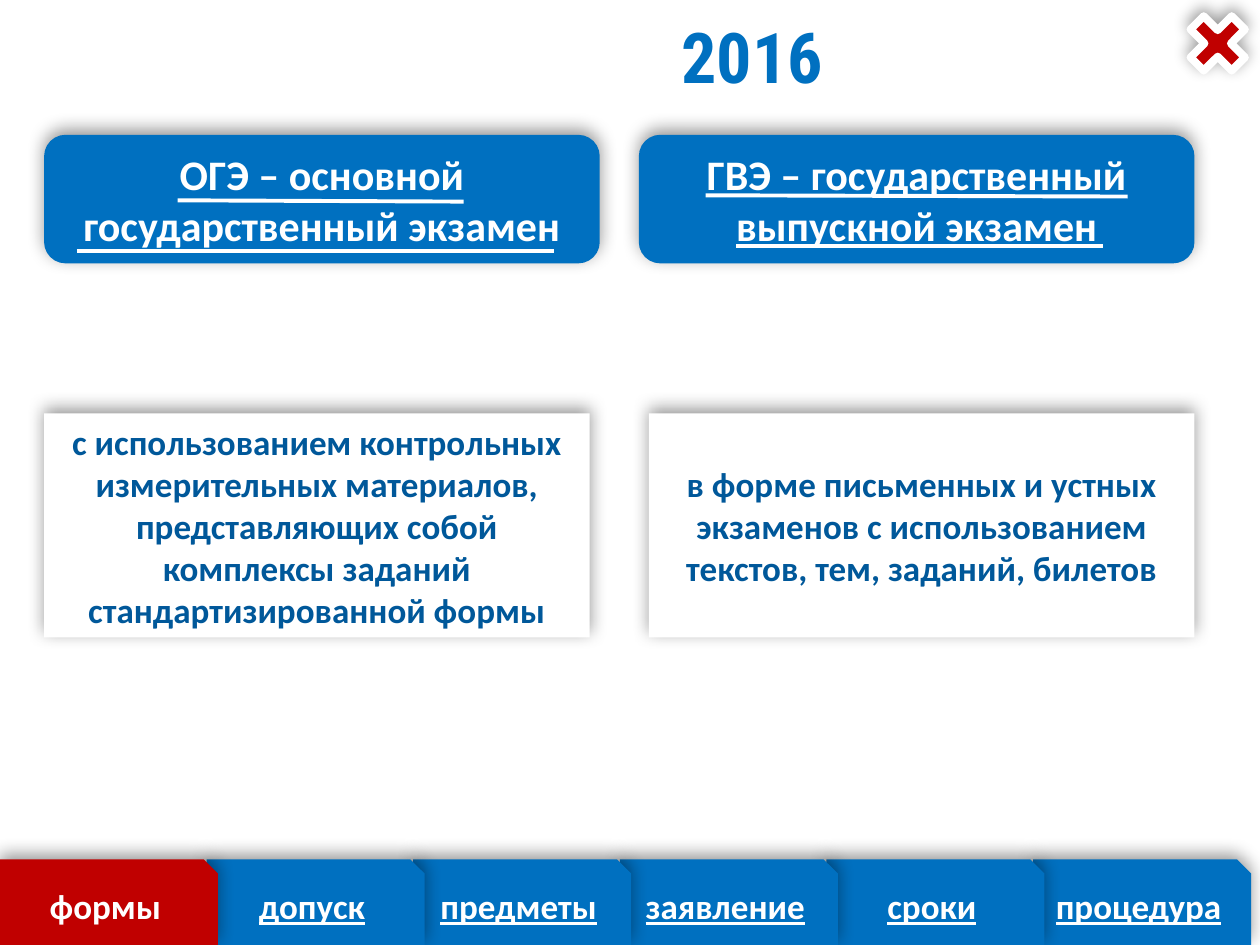
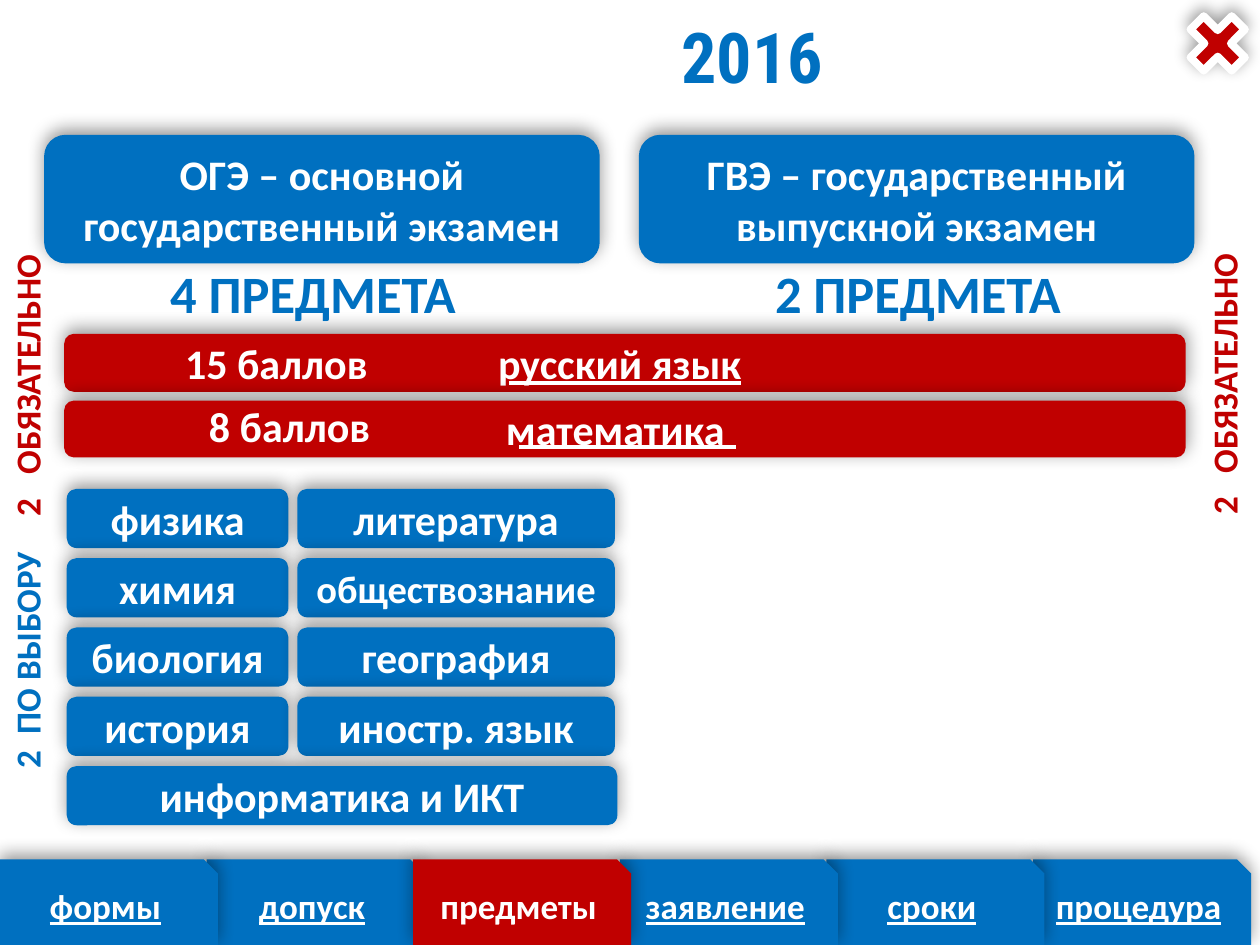
import pptx
import pptx.util
import pptx.dml.color
import pptx.enum.shapes
import pptx.enum.text
import pptx.oxml
import pptx.oxml.ns
import lxml.etree

Inches = pptx.util.Inches
Shapes = pptx.enum.shapes.MSO_SHAPE
Align = pptx.enum.text.PP_ALIGN
Anchor = pptx.enum.text.MSO_ANCHOR

# Shared look
BLUE, RED, WHITE, NAVY = "0070C0", "C00000", "FFFFFF", "00589A"
FONT, TITLE_FONT = "Calibri", "Roboto Condensed"
SECTIONS = ["формы", "допуск", "предметы", "заявление", "сроки", "процедура"]
SECTION_STEP = 1.64
EXAMS = ["ОГЭ – основной государственный экзамен",
         "ГВЭ – государственный выпускной экзамен"]


def color(value):
    return pptx.dml.color.RGBColor.from_string(value)


def place(*lengths):
    return [Inches(length) for length in lengths]


def write(box, text, size=24, ink=WHITE, font=FONT, align=Align.CENTER,
          anchor=Anchor.MIDDLE, underline=None, right_inset=0.1, tab=None):
    """Put one formatted paragraph into a box; tab is a stop in inches."""
    frame = box.text_frame
    frame.word_wrap = True
    frame.vertical_anchor = anchor
    frame.margin_right = Inches(right_inset)
    para = frame.paragraphs[0]
    para.alignment = align
    if tab:
        stops = lxml.etree.SubElement(para._p.get_or_add_pPr(),
                                      pptx.oxml.ns.qn("a:tabLst"))
        lxml.etree.SubElement(stops, pptx.oxml.ns.qn("a:tab"),
                              pos=str(Inches(tab)), algn="l")
    span = para.add_run()
    span.text = text
    span.font.name = font
    span.font.size = pptx.util.Pt(size)
    span.font.bold = True
    span.font.underline = underline
    span.font.color.rgb = color(ink)


def add_glow(shape, blur=10):
    """Soft dark shadow cast upwards."""
    shape.shadow.inherit = False
    effects = shape._element.spPr.find(pptx.oxml.ns.qn("a:effectLst"))
    effects.append(pptx.oxml.parse_xml(
        f'<a:outerShdw {pptx.oxml.ns.nsdecls("a")} blurRad="{pptx.util.Pt(blur)}" '
        f'dist="{pptx.util.Pt(3)}" dir="16200000" algn="b" rotWithShape="0">'
        '<a:srgbClr val="000000"><a:alpha val="40000"/></a:srgbClr></a:outerShdw>'))


def add_panel(page, kind, position, fill, text=None, blur=10, **text_format):
    panel = page.shapes.add_shape(kind, *place(*position))
    panel.fill.solid()
    panel.fill.fore_color.rgb = color(fill)
    panel.line.fill.background()
    add_glow(panel, blur)
    if text:
        write(panel, text, **text_format)
    return panel


def add_label(page, position, text, rotation=0, **text_format):
    label = page.shapes.add_textbox(*place(*position))
    label.rotation = rotation
    write(label, text, anchor=Anchor.TOP, **text_format)


def add_underline(page, left, right, start_y, end_y=None):
    rule = page.shapes.add_connector(
        pptx.enum.shapes.MSO_CONNECTOR.STRAIGHT,
        *place(left, start_y, right, end_y or start_y))
    rule.line.color.rgb = color(WHITE)
    rule.line.width = pptx.util.Pt(2.25)
    lxml.etree.SubElement(rule._element.spPr, pptx.oxml.ns.qn("a:effectLst"))


def add_section_tab(page, index, active):
    add_panel(page, Shapes.SNIP_1_RECTANGLE,
              (index * SECTION_STEP, 6.82, 1.73, 0.68),
              RED if active else BLUE, SECTIONS[index],
              size=20, underline=None if active else True)


def add_page(deck, active):
    """Page with year title, section tabs, close button and exam headers."""
    page = deck.slides.add_slide(deck.slide_layouts[5])
    title = page.shapes.title
    title.left, title.top, title.width, title.height = place(4.71, 0.06, 2.52, 0.77)
    write(title, "2016", size=40, ink=BLUE, font=TITLE_FONT, anchor=Anchor.TOP)

    # Tabs overlap from right to left, the active one lies on top
    others = [i for i in reversed(range(len(SECTIONS))) if i != active]
    for index in others + [active]:
        add_section_tab(page, index, index == active)

    close = add_panel(page, Shapes.MATH_MULTIPLY, (9.35, 0.03, 0.63, 0.63), RED, blur=9)
    close.line.color.rgb = color(WHITE)
    close.line.width = pptx.util.Pt(4.5)

    for left, exam in zip((0.35, 5.07), EXAMS):
        add_panel(page, Shapes.ROUNDED_RECTANGLE, (left, 1.07, 4.41, 1.02), BLUE, exam)
    return page


def build_forms(deck):
    page = add_page(deck, SECTIONS.index("формы"))
    descriptions = [
        "с использованием контрольных измерительных материалов, "
        "представляющих собой комплексы заданий стандартизированной формы",
        "в форме письменных и устных экзаменов с использованием "
        "текстов, тем, заданий, билетов"]
    for left, description in zip((0.35, 5.15), descriptions):
        add_panel(page, Shapes.RECTANGLE, (left, 3.28, 4.33, 1.78), WHITE,
                  description, size=20, ink=NAVY)

    # Underlines of the exam headers
    add_underline(page, 1.41, 3.68, 1.59, 1.6)
    add_underline(page, 0.61, 4.4, 1.99)
    add_underline(page, 5.6, 8.95, 1.55, 1.56)
    add_underline(page, 5.84, 8.75, 1.95)


def build_subjects(deck):
    page = add_page(deck, SECTIONS.index("предметы"))

    # Compulsory subjects
    for top, height, subject, inset in [(2.65, 0.46, "русский язык", 0.18),
                                        (3.18, 0.45, "математика", 0.25)]:
        add_panel(page, Shapes.ROUNDED_RECTANGLE, (0.51, top, 8.9, height), RED,
                  subject, right_inset=inset)
    add_underline(page, 4.04, 5.88, 3.04)
    add_underline(page, 4.12, 5.84, 3.55)
    for left, top, score in [(1.37, 2.63, "15 баллов"), (1.56, 3.13, "8 баллов")]:
        add_label(page, (left, top, 1.88, 0.5), score, align=Align.LEFT)

    # Subject counts
    for left, count in [(0.91, "4 ПРЕДМЕТА"), (5.71, "2 ПРЕДМЕТА")]:
        add_label(page, (left, 2.02, 3.15, 0.61), count, size=30, ink=BLUE)

    # Side captions
    for left, top, caption, ink, tab in [(-1.36, 2.4, "2\tОБЯЗАТЕЛЬНО", RED, 0.33),
                                         (-1.36, 4.4, "2\tПО ВЫБОРУ", BLUE, 0.27),
                                         (8.14, 2.39, "2\tОБЯЗАТЕЛЬНО", RED, 0.33)]:
        add_label(page, (left, top, 3.15, 0.44), caption, rotation=270,
                  size=20, ink=ink, align=Align.LEFT, tab=tab)

    # Optional subjects
    columns = [(0.53, 1.76, ["физика", "химия", "биология", "история"]),
               (2.36, 2.52, ["литература", "обществознание", "география",
                             "иностр. язык"])]
    for left, width, subjects in columns:
        for row, subject in enumerate(subjects):
            add_panel(page, Shapes.ROUNDED_RECTANGLE,
                      (left, 3.88 + row * 0.55, width, 0.47), BLUE, subject,
                      size=22 if subject == "обществознание" else 24)
    add_panel(page, Shapes.ROUNDED_RECTANGLE, (0.53, 6.08, 4.37, 0.47), BLUE,
              "информатика и ИКТ")


def main():
    deck = pptx.Presentation()
    deck.slide_width, deck.slide_height = place(10, 7.5)
    build_forms(deck)
    build_subjects(deck)
    deck.save("out.pptx")


if __name__ == "__main__":
    main()
